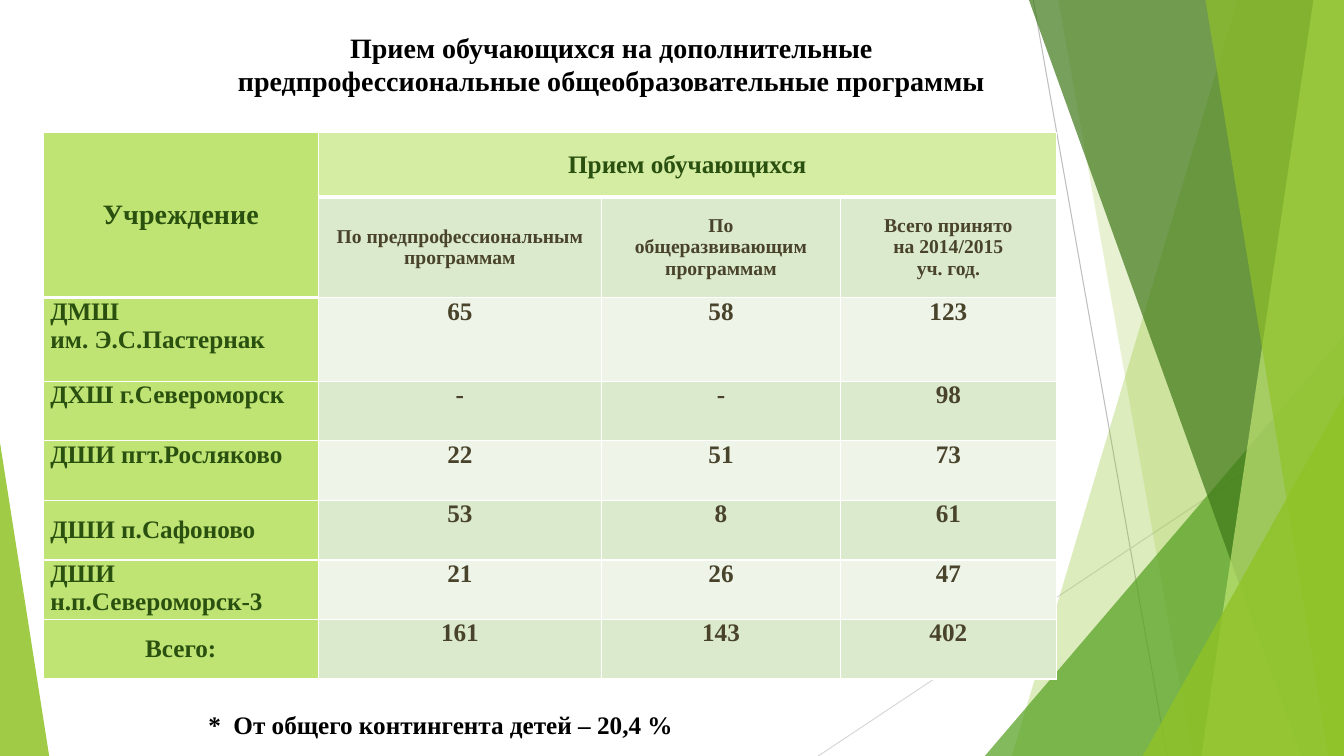
from pptx import Presentation
from pptx.dml.color import RGBColor as Rgb
from pptx.enum.shapes import MSO_CONNECTOR as Link, MSO_SHAPE as Form
from pptx.enum.text import MSO_ANCHOR as Anchor, PP_ALIGN as Align
from pptx.oxml.ns import qn
from pptx.util import Cm, Pt
from lxml.etree import SubElement as Sub

WIDE, HIGH = 33.87, 19.05
FONT = "Times New Roman"
INK = {
    "black": "000000", "white": "FFFFFF", "forest": "2A5010", "brown": "48432A",
    "lime": "C0E474", "pale": "D5EDA2", "sage": "DBE9CD", "mist": "EEF4E8",
    "leaf": "90C226", "grass": "54A021", "moss": "3F7819",
    "grey": "BFBFBF", "silver": "D9D9D9",
}
COLS = [6.93, 7.14, 6.02, 5.44]
ROWS = [1.63, 2.54, 2.11] + [1.5] * 5
HEADS = [
    "По предпрофессиональным программам",
    "По\nобщеразвивающим программам",
    "Всего принято\nна 2014/2015\nуч. год.",
]
DATA = [
    ("ДМШ\nим. Э.С.Пастернак", "65", "58", "123"),
    ("ДХШ г.Североморск", "-", "-", "98"),
    ("ДШИ пгт.Росляково", "22", "51", "73"),
    ("ДШИ п.Сафоново", "53", "8", "61"),
    ("ДШИ н.п.Североморск-3", "21", "26", "47"),
    ("Всего:", "161", "143", "402"),
]
MIDDLE = ("ДШИ п.Сафоново", "Всего:")


def write(frame, text, size=18, ink="black", align=Align.CENTER):
    frame.word_wrap = True
    for i, line in enumerate(text.split("\n")):
        para = frame.paragraphs[0] if i == 0 else frame.add_paragraph()
        para.alignment = align
        run = para.add_run()
        run.text = line
        font = run.font
        font.name, font.size, font.bold = FONT, Pt(size), True
        font.color.rgb = Rgb.from_string(INK[ink])


def paint(shape, ink, alpha):
    shape.shadow.inherit = False
    shape.line.fill.background()
    shape.fill.solid()
    shape.fill.fore_color.rgb = Rgb.from_string(INK[ink])
    tone = shape.fill._xPr.find(qn("a:solidFill"))[0]
    Sub(tone, qn("a:alpha"), val=str(alpha * 1000))


def thread(slide, start, end, ink):
    link = slide.shapes.add_connector(
        Link.STRAIGHT, *(Cm(v) for v in start + end))
    link.line.color.rgb = Rgb.from_string(INK[ink])
    link.line.width = Pt(0.75)
    Sub(link._element.spPr, qn("a:effectLst"))


def facet(slide, box, top, foot, ink, alpha):
    x, y, w, h = box
    right, base = x + w, y + h
    spots = [(right, y), (right, base), (x + foot, base)]
    pen = slide.shapes.build_freeform(Cm(x + top), Cm(y))
    pen.add_line_segments([(Cm(a), Cm(b)) for a, b in spots])
    paint(pen.convert_to_shape(), ink, alpha)


def wedge(slide, box, tip, ink, alpha):
    shape = slide.shapes.add_shape(Form.ISOSCELES_TRIANGLE, *(Cm(v) for v in box))
    shape.adjustments[0] = tip
    paint(shape, ink, alpha)


def corner(slide, box, wide, high, ink, alpha):
    x, y, w, h = box
    wedge(slide, (x + w - wide, y + h - high, wide, high), 1, ink, alpha)


def decor(slide, box):
    x, y, w, h = box
    thread(slide, (x + 1.22, y), (x + 4.59, y + h), "grey")
    thread(slide, (x + w, y + 10.24), (x - 4.2, y + h), "silver")
    facet(slide, box, 6.37, 0.68, "leaf", 30)
    facet(slide, box, 1.85, 5.23, "leaf", 20)
    corner(slide, box, 9.05, 10.59, "grass", 72)
    facet(slide, box, 1.11, 7.97, "moss", 70)
    facet(slide, box, 8.28, 5.46, "lime", 70)
    facet(slide, box, 5.56, 8.66, "leaf", 65)
    corner(slide, box, 5.07, 9.07, "leaf", 80)


def edge(cell, foot):
    props = cell._tc.get_or_add_tcPr()
    for side, wide in (("L", 1), ("R", 1), ("T", 1), ("B", foot)):
        line = Sub(props, qn("a:ln" + side), w=str(Pt(wide)))
        Sub(Sub(line, qn("a:solidFill")), qn("a:srgbClr"), val=INK["white"])


def fill(cell, text, back, foot=1, mid=True, **style):
    edge(cell, foot)
    cell.fill.solid()
    cell.fill.fore_color.rgb = Rgb.from_string(INK[back])
    cell.margin_left = cell.margin_right = Cm(0.18)
    cell.margin_top = cell.margin_bottom = 0
    cell.vertical_anchor = Anchor.MIDDLE if mid else Anchor.TOP
    if text:
        write(cell.text_frame, text, **style)


def intake(slide, box):
    grid = slide.shapes.add_table(
        len(ROWS), len(COLS), *(Cm(v) for v in box)).table
    for col, wide in zip(grid.columns, COLS):
        col.width = Cm(wide)
    for row, tall in zip(grid.rows, ROWS):
        row.height = Cm(tall)
    grid.cell(0, 0).merge(grid.cell(1, 0))
    grid.cell(0, 1).merge(grid.cell(0, 3))
    fill(grid.cell(0, 0), "Учреждение", "lime", 3, size=20, ink="forest")
    fill(grid.cell(1, 0), "", "lime", 3)
    for c, text in enumerate(("Прием обучающихся", "", ""), 1):
        fill(grid.cell(0, c), text, "pale", 3, ink="forest")
    for c, text in enumerate(HEADS, 1):
        fill(grid.cell(1, c), text, "sage", size=14, ink="brown")
    for r, (name, *nums) in enumerate(DATA, 2):
        align = Align.CENTER if name == "Всего:" else Align.JUSTIFY
        fill(grid.cell(r, 0), name, "lime", mid=name in MIDDLE,
             ink="forest", align=align)
        for c, num in enumerate(nums, 1):
            fill(grid.cell(r, c), num, "sage" if r % 2 else "mist",
                 mid=False, ink="brown")


def label(slide, box, text, **style):
    area = slide.shapes.add_textbox(*(Cm(v) for v in box))
    write(area.text_frame, text, **style)


def main():
    deck = Presentation()
    deck.slide_width, deck.slide_height = Cm(WIDE), Cm(HIGH)
    slide = deck.slides.add_slide(deck.slide_layouts[6])
    decor(slide, (24.82, 0, WIDE - 24.82, HIGH))
    wedge(slide, (0, 11.15, 1.24, 7.9), 0, "leaf", 85)
    intake(slide, (1.09, 3.33, sum(COLS), sum(ROWS)))
    label(slide, (5.49, 0.64, 19.84, 1.96),
          "Прием обучающихся на дополнительные предпрофессиональные "
          "общеобразовательные программы", size=20)
    label(slide, (5, 17.75, 16, 1.02),
          "*  От общего контингента детей – 20,4 %", align=Align.LEFT)
    deck.save("out.pptx")


if __name__ == "__main__":
    main()
